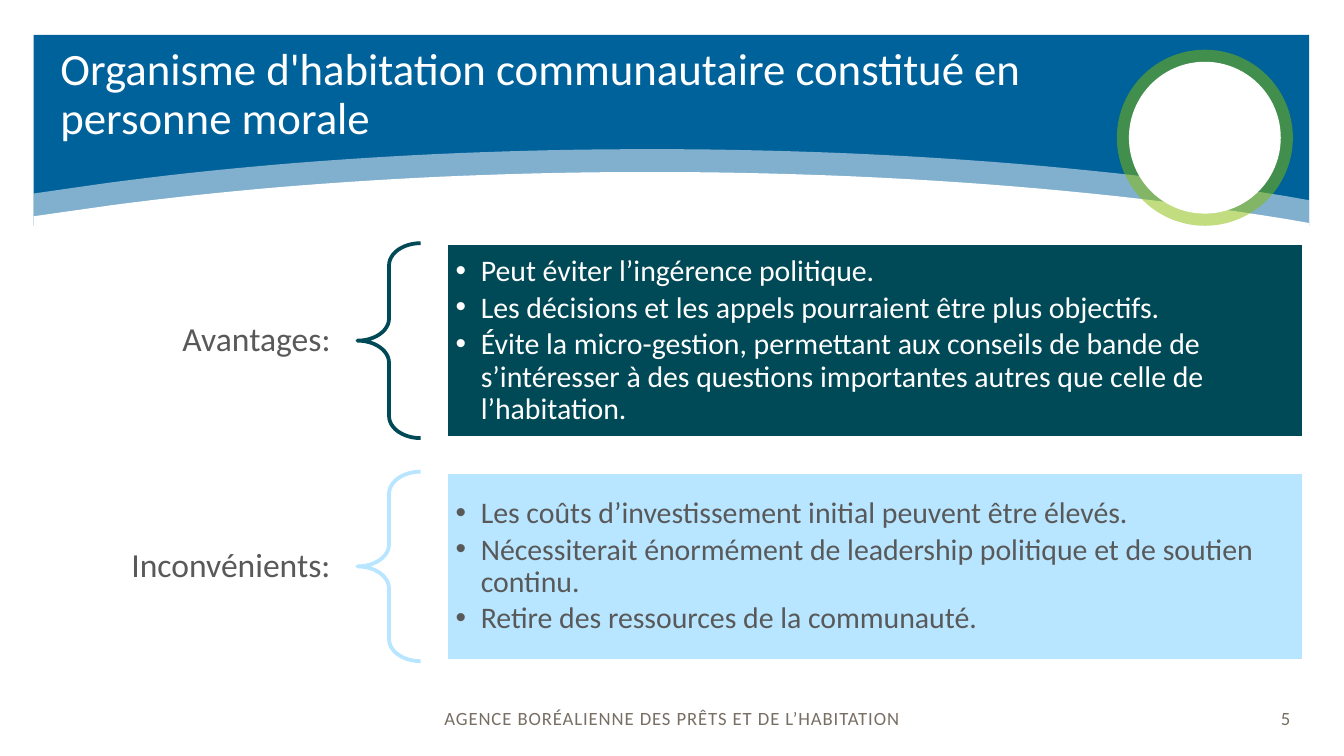
from lxml import etree
from pptx import Presentation
from pptx import util as u
from pptx.dml.color import RGBColor
from pptx.enum import shapes, text
from pptx.oxml.ns import qn

BLUE = RGBColor(0x00, 0x62, 0x9B)
WHITE = RGBColor(0xFF, 0xFF, 0xFF)
GREEN = RGBColor(0x84, 0xBD, 0x00)
TEAL = RGBColor(0x00, 0x49, 0x56)
SKY = RGBColor(0xB8, 0xE5, 0xFF)
GREY = RGBColor(0x59, 0x59, 0x59)
TAUPE = RGBColor(0x77, 0x6E, 0x64)
FONT = "Calibri"
I = u.Inches
SHAPE = shapes.MSO_SHAPE
ALIGN = text.PP_ALIGN


def paint(sp, fill=None, line=None, alpha=None):
    sp.shadow.inherit = False
    if fill is None:
        sp.fill.background()
    else:
        sp.fill.solid()
        sp.fill.fore_color.rgb = fill
    if alpha is not None:
        clr = sp.fill._xPr.find(qn("a:solidFill"))[0]
        etree.SubElement(clr, qn("a:alpha")).set("val", str(alpha * 1000))
    if line is None:
        sp.line.fill.background()
    else:
        sp.line.color.rgb = line
        sp.line.width = u.Pt(2)


def add_preset(s, kind, box, **look):
    sp = s.shapes.add_shape(kind, *map(I, box))
    paint(sp, **look)
    return sp


def add_bullet(p):
    pPr = p._p.get_or_add_pPr()
    pPr.set("marL", str(u.Pt(13.5)))
    pPr.set("indent", str(-u.Pt(13.5)))
    etree.SubElement(pPr, qn("a:buFont")).set("typeface", "Arial")
    etree.SubElement(pPr, qn("a:buChar")).set("char", "•")


def write(sp, lines, size, color, insets=(0.1, 0.05, 0.1, 0.05),
          bullets=False, tracking=None, **para):
    tf = sp.text_frame
    frame = dict(word_wrap=True, auto_size=text.MSO_AUTO_SIZE.NONE,
                 vertical_anchor=text.MSO_ANCHOR.MIDDLE)
    sides = ("margin_left", "margin_top", "margin_right", "margin_bottom")
    frame.update(zip(sides, map(I, insets)))
    for name, value in frame.items():
        setattr(tf, name, value)
    for i, line in enumerate(lines):
        p = tf.paragraphs[0] if i == 0 else tf.add_paragraph()
        for name, value in para.items():
            setattr(p, name, value)
        if bullets:
            add_bullet(p)
        r = p.add_run()
        r.text = line
        for name, value in dict(name=FONT, size=u.Pt(size), bold=False).items():
            setattr(r.font, name, value)
        r.font.color.rgb = color
        if tracking:
            r._r.get_or_add_rPr().set("spc", str(tracking))


def bezier(a, b, c, d, steps=24):
    for i in range(1, steps + 1):
        t = i / steps
        k = 1 - t
        yield tuple(k**3 * m + 3 * k * k * t * n + 3 * k * t * t * o + t**3 * q
                    for m, n, o, q in zip(a, b, c, d))


def add_swoosh(s, x, y, w, bottom, alpha=None):
    top = (x + 4.59, y)
    right = (x + 9.32, y + 0.35)
    left = (x + 0.56, y + 0.25)
    pts = list(bezier(top, (x + 6.34, y), (x + 7.97, y + 0.13), right))
    pts += [(x + w, y + 0.38), (x + w, bottom), (x, bottom), (x, y + 0.33), left]
    pts += bezier(left, (x + 1.76, y + 0.09), (x + 3.13, y), top)
    fb = s.shapes.build_freeform(I(top[0]), I(top[1]))
    fb.add_line_segments([(I(a), I(b)) for a, b in pts], close=True)
    paint(fb.convert_to_shape(), WHITE, alpha=alpha)


def add_header(s, x, y, w, h, title):
    add_preset(s, SHAPE.RECTANGLE, (x, y, w, h), fill=BLUE)
    bottom = y + h + 0.11
    add_swoosh(s, x, y + 0.85, w, bottom, alpha=50)
    add_swoosh(s, x, y + 1.02, w, bottom)
    for inset, look in ((0, dict(fill=GREEN, alpha=50)), (0.09, dict(fill=WHITE))):
        d = 1.31 - 2 * inset
        add_preset(s, SHAPE.OVAL, (x + 8.06 + inset, y + 0.11 + inset, d, d), **look)
    sp = s.shapes.title
    sp.left, sp.top, sp.width, sp.height = map(I, (x + 0.1, y, 7.86, 0.89))
    write(sp, [title], 24, WHITE, alignment=ALIGN.LEFT, line_spacing=u.Pt(26))
    s.shapes._spTree.append(sp._element)


def add_argument(s, x, y, w, h, label, points, fill, color):
    sp = s.shapes.add_textbox(I(x), I(y), I(2.35), I(h))
    write(sp, [label], 18, GREY, (0.14, 0.05, 0.2, 0.05),
          alignment=ALIGN.RIGHT, line_spacing=0.9)
    brace = add_preset(s, SHAPE.LEFT_BRACE, (x + 2.35, y, 0.47, h), line=fill)
    brace.adjustments[0] = 0.35
    brace.adjustments[1] = 0.5
    panel = add_preset(s, SHAPE.RECTANGLE, (x + 3.01, y, w - 3.01, h),
                       fill=fill, line=WHITE)
    write(panel, points, 16, color, (0.07,) * 4, bullets=True,
          alignment=ALIGN.LEFT, line_spacing=0.9, space_after=u.Pt(2.4))


def add_footer(s, x, y, w, h, owner, number):
    bar = add_preset(s, SHAPE.RECTANGLE, (x, y, w, h), fill=WHITE)
    write(bar, [owner], 10, TAUPE, (0,) * 4, tracking=50, alignment=ALIGN.CENTER)
    sp = s.shapes.add_textbox(I(x + w - 0.86), I(y), I(0.56), I(h))
    write(sp, [number], 10, TAUPE, tracking=50, alignment=ALIGN.RIGHT)


def main():
    prs = Presentation()
    prs.slide_width = I(10)
    prs.slide_height = prs.slide_width * 9 // 16
    s = prs.slides.add_slide(prs.slide_layouts[5])
    add_header(s, 0.25, 0.26, 9.49, 1.42,
               "Organisme d'habitation communautaire constitué en personne morale")
    add_footer(s, 0, 5.05, 10, 0.58,
               "AGENCE BORÉALIENNE DES PRÊTS ET DE L’HABITATION", "5")
    add_argument(s, 0.31, 1.81, 9.39, 1.45, "Avantages:", [
        "Peut éviter l’ingérence politique.",
        "Les décisions et les appels pourraient être plus objectifs.",
        "Évite la micro-gestion, permettant aux conseils de bande de s’intéresser "
        "à des questions importantes autres que celle de l’habitation.",
    ], TEAL, WHITE)
    add_argument(s, 0.31, 3.51, 9.39, 1.41, "Inconvénients:", [
        "Les coûts d’investissement initial peuvent être élevés.",
        "Nécessiterait énormément de leadership politique et de soutien continu.",
        "Retire des ressources de la communauté.",
    ], SKY, GREY)
    prs.save("out.pptx")


if __name__ == "__main__":
    main()
